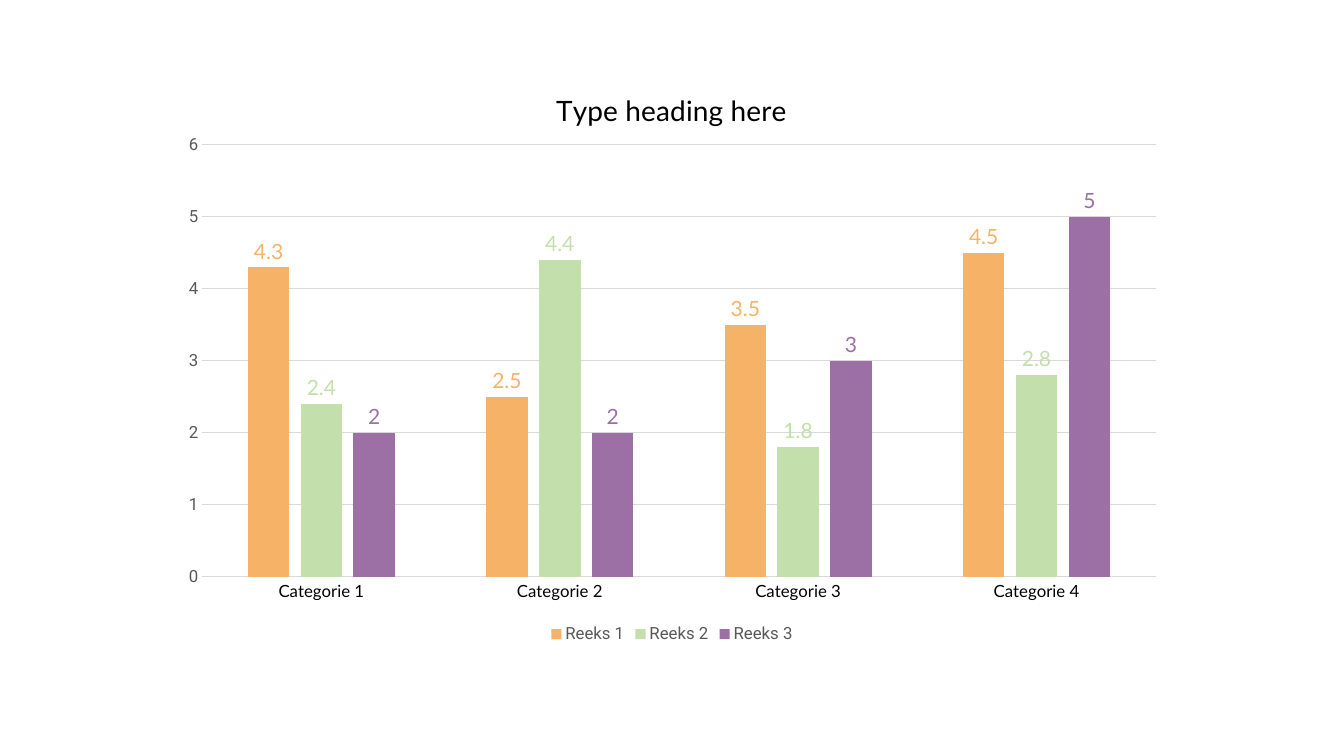
from lxml.etree import SubElement
from pptx import Presentation
from pptx.chart.data import CategoryChartData
from pptx.dml.color import RGBColor
from pptx.enum.chart import (XL_CHART_TYPE, XL_LABEL_POSITION,
                             XL_LEGEND_POSITION, XL_TICK_MARK)
from pptx.oxml.ns import qn
from pptx.util import Pt

CATEGORIES = ["Categorie 1", "Categorie 2", "Categorie 3", "Categorie 4"]
SERIES = [
    ("Reeks 1", (4.3, 2.5, 3.5, 4.5), "F6B266"),
    ("Reeks 2", (2.4, 4.4, 1.8, 2.8), "C2DFAC"),
    ("Reeks 3", (2, 2, 3, 5), "9C6FA5"),
]
BLACK, GRAY, LIGHT_GRAY = "000000", "595959", "D9D9D9"


def color(hex_value):
    return RGBColor.from_string(hex_value)


def style_font(font, name, size, hex_value):
    font.name = name
    font.size = Pt(size)
    font.bold = False
    font.color.rgb = color(hex_value)


def style_line(line):
    line.color.rgb = color(LIGHT_GRAY)
    line.width = Pt(0.75)


def place(element, position, **values):
    """Give a chart part a fixed place, in fractions of the chart."""
    layout = element.find(qn("c:layout"))
    if layout is None:
        layout = element.makeelement(qn("c:layout"))
        element.insert(position, layout)
    for child in list(layout):
        layout.remove(child)
    manual = SubElement(layout, qn("c:manualLayout"))
    for tag, value in values.items():
        SubElement(manual, qn(f"c:{tag}")).set("val", str(value))


def add_column_chart(slide):
    data = CategoryChartData()
    data.categories = CATEGORIES
    for name, values, _ in SERIES:
        data.add_series(name, values)
    frame = slide.shapes.add_chart(XL_CHART_TYPE.COLUMN_CLUSTERED, Pt(120),
                                   Pt(44), Pt(720), Pt(419), data)
    chart = frame.chart
    style_font(chart.font, "Roboto", 15, BLACK)
    return chart


def style_title(chart, text):
    chart.has_title = True
    title = chart.chart_title
    title.include_in_layout = False
    paragraph = title.text_frame.paragraphs[0]
    paragraph.text = text
    style_font(paragraph.runs[0].font, "Lato", 20, BLACK)
    place(title._element, 1, xMode="edge", yMode="edge", x=0.38, y=0.04)


def style_axes(chart):
    for axis in (chart.category_axis, chart.value_axis):
        axis.major_tick_mark = XL_TICK_MARK.NONE
        axis.minor_tick_mark = XL_TICK_MARK.NONE
    style_font(chart.category_axis.tick_labels.font, "Lato", 12, BLACK)
    style_line(chart.category_axis.format.line)

    values = chart.value_axis
    values.minimum_scale, values.maximum_scale, values.major_unit = 0, 6, 1
    style_font(values.tick_labels.font, "Roboto", 12, GRAY)
    values.format.line.fill.background()
    values.has_major_gridlines = True
    style_line(values.major_gridlines.format.line)


def style_columns(chart):
    plot = chart.plots[0]
    plot.gap_width = 219
    plot.overlap = -27
    plot.vary_by_categories = False
    for series, (_, _, hex_value) in zip(plot.series, SERIES):
        series.format.fill.solid()
        series.format.fill.fore_color.rgb = color(hex_value)
        labels = series.data_labels
        labels.show_value = True
        labels.position = XL_LABEL_POSITION.OUTSIDE_END
        style_font(labels.font, "Lato", 15, hex_value)
    place(chart._chartSpace.chart.plotArea, 0, layoutTarget="inner",
          xMode="edge", yMode="edge", x=0.034, y=0.142, w=0.946, h=0.736)


def style_legend(chart):
    chart.has_legend = True
    chart.legend.position = XL_LEGEND_POSITION.BOTTOM
    chart.legend.include_in_layout = False
    style_font(chart.legend.font, "Roboto", 12, GRAY)


def main():
    presentation = Presentation()
    presentation.slide_width = Pt(960)
    presentation.slide_height = Pt(540)
    slide = presentation.slides.add_slide(presentation.slide_layouts[6])

    # Column chart with its heading, axes and legend
    chart = add_column_chart(slide)
    style_title(chart, "Type heading here")
    style_axes(chart)
    style_columns(chart)
    style_legend(chart)

    presentation.save("out.pptx")


if __name__ == "__main__":
    main()
